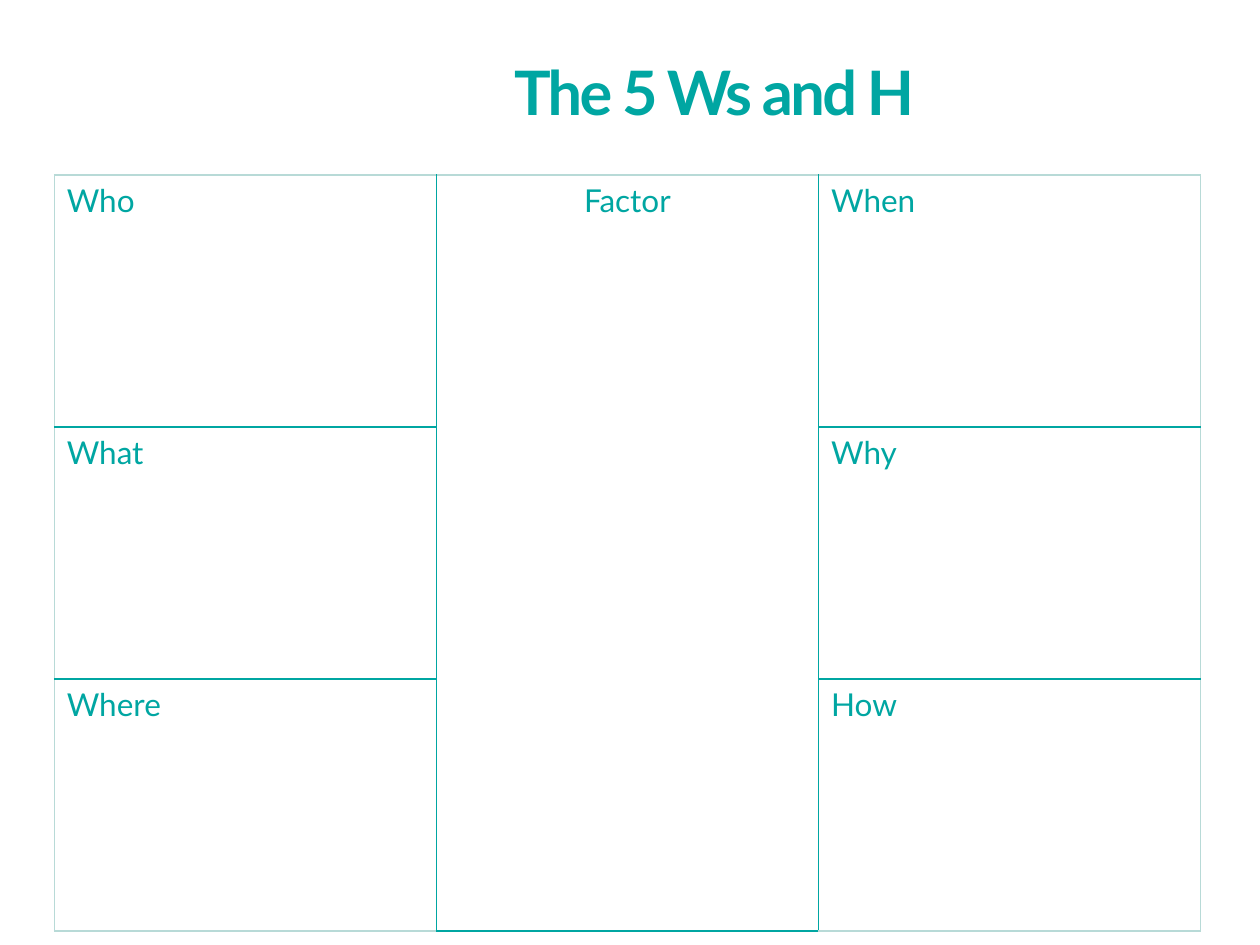
from typing import NamedTuple

from lxml import etree
from pptx import Presentation
from pptx.dml.color import RGBColor
from pptx.enum import text
from pptx.oxml import ns
from pptx.util import Inches, Pt

TEAL = "00A6A2"
PALE = "B8DAD7"
FONT = "Lato"
SIZE = 3


class Label(NamedTuple):
    row: int
    column: int
    words: str
    align: text.PP_ALIGN = text.PP_ALIGN.LEFT


class Border(NamedTuple):
    side: str
    outer: bool
    outer_width: float


LABELS = [
    Label(0, 0, "Who"),
    Label(1, 0, "What"),
    Label(2, 0, "Where"),
    Label(0, 1, "Factor", text.PP_ALIGN.CENTER),
    Label(0, 2, "When"),
    Label(1, 2, "Why"),
    Label(2, 2, "How"),
]


def colour(value: str) -> RGBColor:
    return RGBColor.from_string(value)


def add_span(para, words: str, size: float, bold: bool = False):
    span = para.add_run()
    span.text = words
    span.font.name = FONT
    span.font.size = Pt(size)
    span.font.bold = bold
    span.font.color.rgb = colour(TEAL)
    return span


def add_border(cell, border: Border) -> None:
    width = border.outer_width if border.outer else 1
    properties = cell._tc.get_or_add_tcPr()
    line = etree.SubElement(properties, ns.qn(f"a:ln{border.side}"), w=str(Pt(width)))
    fill = etree.SubElement(line, ns.qn("a:solidFill"))
    etree.SubElement(fill, ns.qn("a:srgbClr"), val=PALE if border.outer else TEAL)


def add_title(page) -> None:
    box = page.shapes.title
    box.left, box.top = Inches(3.98), Inches(0.52)
    box.width, box.height = Inches(8.61), Inches(0.47)
    frame = box.text_frame
    frame.auto_size = text.MSO_AUTO_SIZE.NONE
    frame.vertical_anchor = text.MSO_ANCHOR.TOP
    para = frame.paragraphs[0]
    para.alignment = text.PP_ALIGN.LEFT
    para.line_spacing = Pt(32)
    span = add_span(para, "The 5 Ws and H", 35, bold=True)
    span.font._element.set("spc", "-150")


def add_grid(page) -> None:
    table = page.shapes.add_table(
        SIZE, SIZE, Inches(0.43), Inches(1.39), Inches(9.1), Inches(6)
    ).table
    table.first_row = False
    table.horz_banding = False
    last = SIZE - 1
    for row in range(SIZE):
        for column in range(SIZE):
            cell = table.cell(row, column)
            for border in (
                Border("L", column == 0, 0.5),
                Border("R", column == last, 0.5),
                Border("T", row == 0, 1),
                Border("B", row == last, 1),
            ):
                add_border(cell, border)
            cell.fill.background()
    table.cell(0, 1).merge(table.cell(last, 1))
    for label in LABELS:
        para = table.cell(label.row, label.column).text_frame.paragraphs[0]
        para.alignment = label.align
        add_span(para, label.words, 18)


def main() -> None:
    deck = Presentation()
    deck.slide_width, deck.slide_height = Inches(10), Inches(7.5)
    page = deck.slides.add_slide(deck.slide_layouts[5])
    add_title(page)
    add_grid(page)
    deck.save("out.pptx")


if __name__ == "__main__":
    main()
